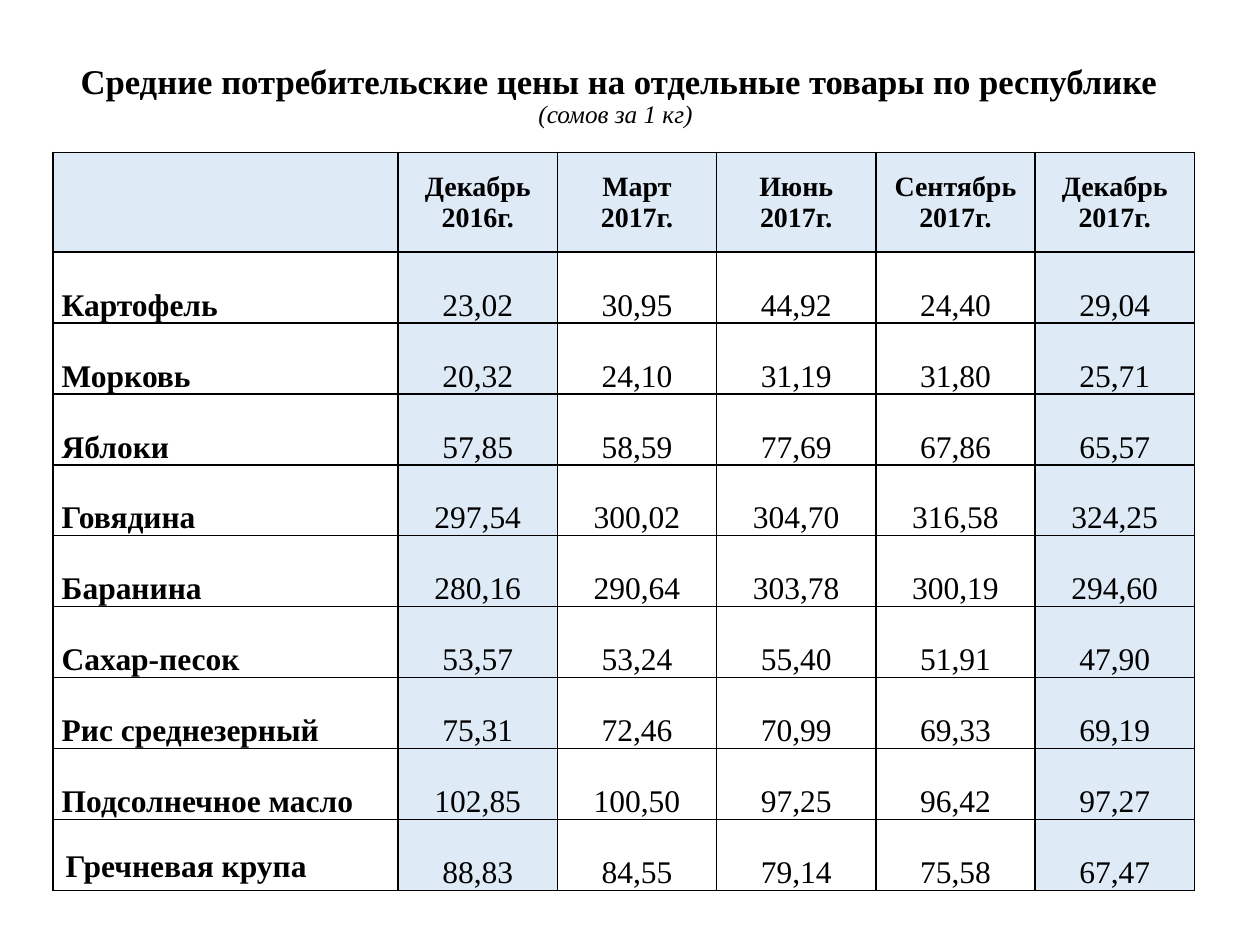
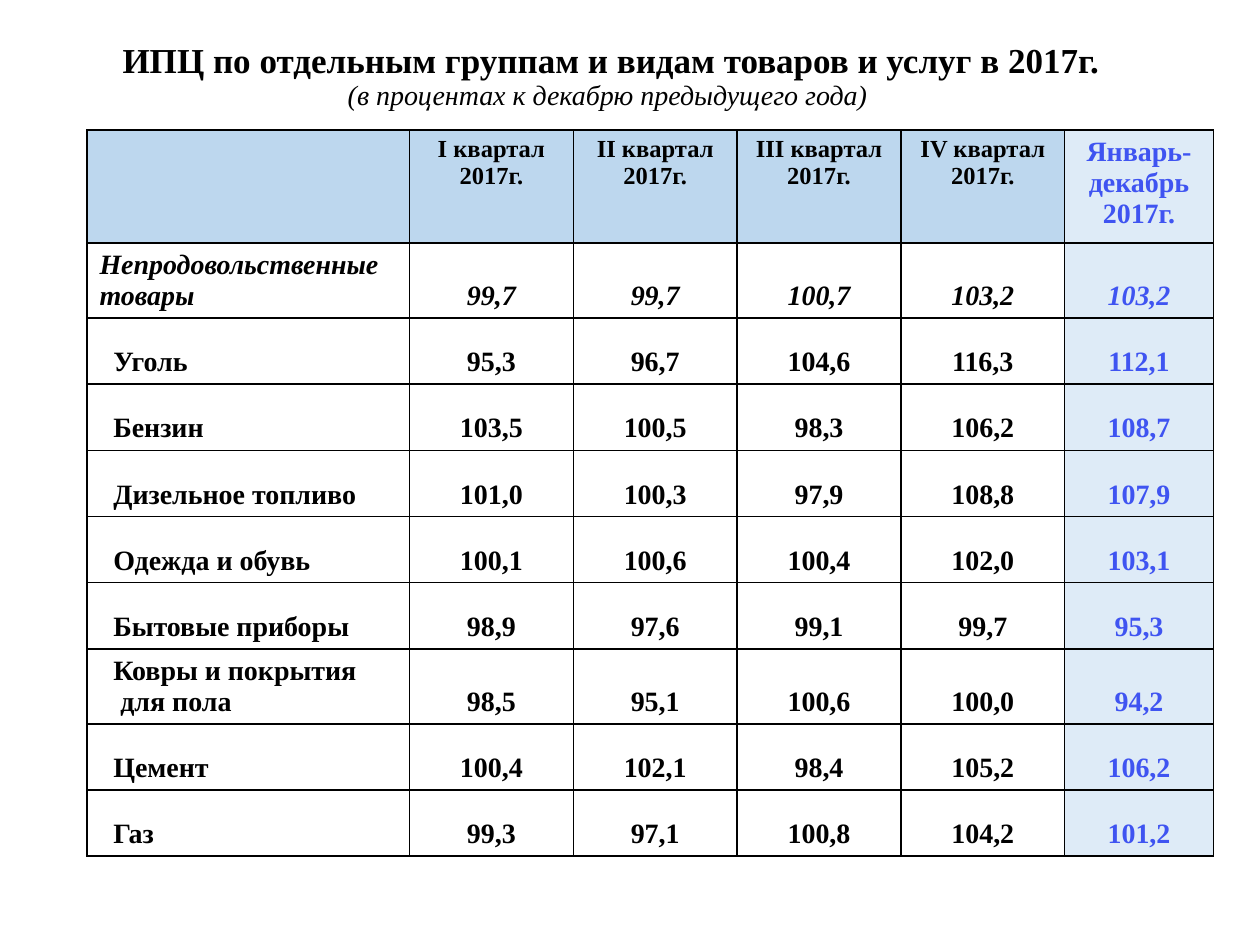
"""Build two slides of consumer price tables."""
from lxml.etree import SubElement
from pptx import Presentation
from pptx.dml.color import RGBColor
from pptx.enum.text import MSO_ANCHOR, MSO_AUTO_SIZE, PP_ALIGN
from pptx.oxml.ns import qn
from pptx.util import Inches, Pt

FONT = "Times New Roman"
BLACK = "000000"
PALE_BLUE = "DEEBF7"
MID_BLUE = "BDD7EE"
ACCENT = "3F54F1"


def write(paragraph, text, size=16, bold=True, italic=False, color=BLACK, align=PP_ALIGN.CENTER):
    """Add a formatted run to a paragraph."""
    paragraph.alignment = align
    run = paragraph.add_run()
    run.text = text
    run.font.name = FONT
    run.font.size = Pt(size)
    run.font.bold = bold
    run.font.italic = italic
    run.font.color.rgb = RGBColor.from_string(color)


def draw_borders(cell, color=BLACK, width=1):
    """Draw a solid line on all four sides of a cell."""
    properties = cell._tc.get_or_add_tcPr()
    for side in ("lnL", "lnR", "lnT", "lnB"):
        line = SubElement(properties, qn(f"a:{side}"), w=str(Pt(width)))
        fill = SubElement(line, qn("a:solidFill"))
        SubElement(fill, qn("a:srgbClr"), val=color)


price_rows = [
    ["", "Декабрь 2016г.", "Март 2017г.", "Июнь 2017г.", "Сентябрь 2017г.", "Декабрь 2017г."],
    ["Картофель", "23,02", "30,95", "44,92", "24,40", "29,04"],
    ["Морковь", "20,32", "24,10", "31,19", "31,80", "25,71"],
    ["Яблоки", "57,85", "58,59", "77,69", "67,86", "65,57"],
    ["Говядина", "297,54", "300,02", "304,70", "316,58", "324,25"],
    ["Баранина", "280,16", "290,64", "303,78", "300,19", "294,60"],
    ["Сахар-песок", "53,57", "53,24", "55,40", "51,91", "47,90"],
    ["Рис среднезерный", "75,31", "72,46", "70,99", "69,33", "69,19"],
    ["Подсолнечное масло", "102,85", "100,50", "97,25", "96,42", "97,27"],
    ["Гречневая крупа", "88,83", "84,55", "79,14", "75,58", "67,47"],
]
index_rows = [
    ["", "I квартал 2017г.", "II квартал 2017г.", "III квартал 2017г.", "IV квартал 2017г.",
     "Январь-декабрь 2017г."],
    ["Непродовольственные товары", "99,7", "99,7", "100,7", "103,2", "103,2"],
    ["Уголь", "95,3", "96,7", "104,6", "116,3", "112,1"],
    ["Бензин", "103,5", "100,5", "98,3", "106,2", "108,7"],
    ["Дизельное топливо", "101,0", "100,3", "97,9", "108,8", "107,9"],
    ["Одежда и обувь", "100,1", "100,6", "100,4", "102,0", "103,1"],
    ["Бытовые приборы", "98,9", "97,6", "99,1", "99,7", "95,3"],
    ["Ковры и покрытия\n для пола", "98,5", "95,1", "100,6", "100,0", "94,2"],
    ["Цемент", "100,4", "102,1", "98,4", "105,2", "106,2"],
    ["Газ", "99,3", "97,1", "100,8", "104,2", "101,2"],
]
pages = [
    dict(title="Средние потребительские цены на отдельные товары по республике",
         subtitle="(сомов за 1 кг) ", title_sizes=(19.8, 14.4), title_box=(0.41, 0.4, 9, 0.73),
         rows=price_rows, table_box=(0.42, 1.21, 9.06, 5.86), header_height=0.79,
         widths=[2.74] + [(9.06 - 2.74) / 5] * 5),
    dict(title="ИПЦ по отдельным группам и видам товаров и услуг в 2017г.",
         subtitle="(в процентах к декабрю предыдущего года) ", title_sizes=(20, 16),
         title_box=(0.54, 0.19, 8.62, 0.85),
         rows=index_rows, table_box=(0.69, 1.03, 8.94, 5.63), header_height=0.9,
         widths=[2.56] + [1.3] * 4 + [1.18]),
]

presentation = Presentation()
presentation.slide_width = Inches(10)
presentation.slide_height = Inches(7.5)

for page in pages:
    slide = presentation.slides.add_slide(presentation.slide_layouts[5])
    rows = page["rows"]
    is_prices = rows is price_rows

    title = slide.shapes.title
    title.left, title.top, title.width, title.height = map(Inches, page["title_box"])
    title.text_frame.auto_size = MSO_AUTO_SIZE.NONE
    title.text_frame.word_wrap = True
    title.text_frame.vertical_anchor = MSO_ANCHOR.MIDDLE
    heading = title.text_frame.paragraphs[0]
    heading.line_spacing = 0.9
    title_size, subtitle_size = page["title_sizes"]
    write(heading, page["title"], size=title_size)
    heading.add_line_break()
    write(heading, page["subtitle"], size=subtitle_size, bold=False, italic=True)

    table = slide.shapes.add_table(len(rows), len(rows[0]), *map(Inches, page["table_box"])).table
    table.first_row = False
    table.horz_banding = False
    for column, width in zip(table.columns, page["widths"]):
        column.width = Inches(width)
    body_height = (page["table_box"][3] - page["header_height"]) / (len(rows) - 1)
    for row_number, values in enumerate(rows):
        is_header = row_number == 0
        table.rows[row_number].height = Inches(page["header_height"] if is_header else body_height)
        for column_number, value in enumerate(values):
            is_label = column_number == 0
            is_last = column_number == len(values) - 1
            cell = table.cell(row_number, column_number)
            draw_borders(cell)
            cell.vertical_anchor = MSO_ANCHOR.BOTTOM
            style = dict(align=PP_ALIGN.LEFT if is_label else PP_ALIGN.CENTER)
            if is_prices:
                fill = PALE_BLUE if is_header or is_last or column_number == 1 else None
                style.update(size=16 if is_header else 18, bold=is_header or is_label)
                if not (is_label and row_number == len(rows) - 1):
                    cell.margin_left = cell.margin_right = Inches(0.07 if is_header or is_label else 0)
                    cell.margin_top = cell.margin_bottom = 0
                if is_header:
                    cell.vertical_anchor = MSO_ANCHOR.MIDDLE
            else:
                fill = PALE_BLUE if is_last else MID_BLUE if is_header else None
                style.update(size=14 if is_header and not is_last else 16,
                             italic=row_number == 1, color=ACCENT if is_last else BLACK)
                if is_header:
                    cell.vertical_anchor = MSO_ANCHOR.TOP
                elif is_label and row_number > 1:
                    cell.margin_left = Inches(0.21)
            if fill:
                cell.fill.solid()
                cell.fill.fore_color.rgb = RGBColor.from_string(fill)
            else:
                cell.fill.background()
            if value:
                first_line, *other_lines = value.split("\n")
                write(cell.text_frame.paragraphs[0], first_line, **style)
                for line in other_lines:
                    write(cell.text_frame.add_paragraph(), line, **style)

presentation.save("out.pptx")
